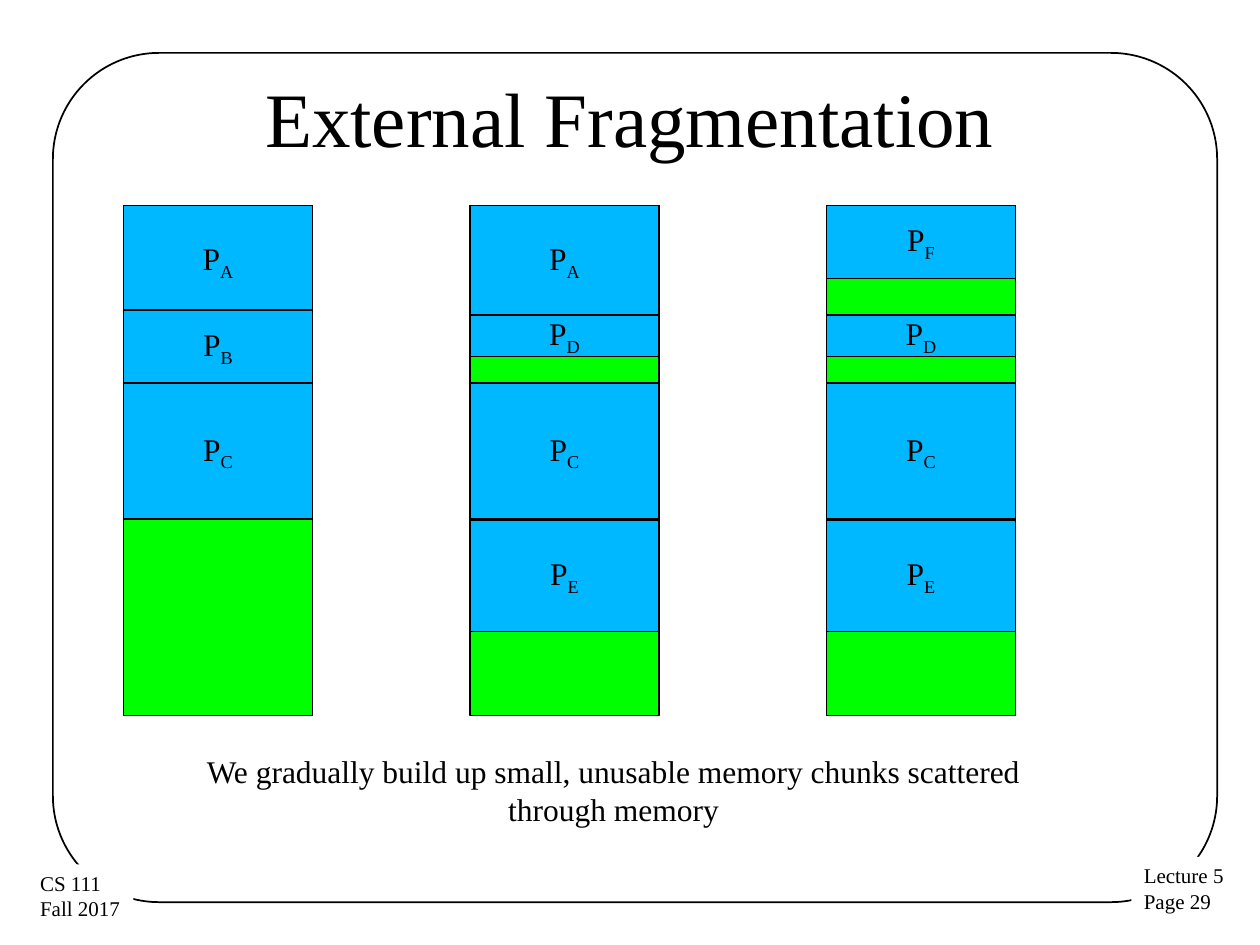
from dataclasses import dataclass

from pptx import Presentation
from pptx.dml.color import RGBColor as RGB
from pptx.enum.shapes import MSO_SHAPE as Shape
from pptx.enum.text import MSO_ANCHOR as Anchor, PP_ALIGN as Align
from pptx.util import Inches, Pt


@dataclass(frozen=True)
class Theme:
    face: str = "Times New Roman"
    ink: RGB = RGB(0, 0, 0)
    paper: RGB = RGB(255, 255, 255)
    used: RGB = RGB(0x00, 0xB8, 0xFF)
    free: RGB = RGB(0x00, 0xFF, 0x00)
    head: int = 44
    body: int = 18
    small: int = 12


class Deck:
    """Draws styled elements on the current slide."""

    def __init__(self, theme, slide):
        self.theme, self.slide = theme, slide

    def style(self, para, size, align=Align.CENTER):
        para.alignment = align
        font = para.font
        font.name, font.size = self.theme.face, Pt(size)
        font.color.rgb = self.theme.ink

    def title(self, text, *area):
        title = self.slide.shapes.title
        title.left, title.top, title.width, title.height = map(Inches, area)
        frame = title.text_frame
        frame.text, frame.vertical_anchor = text, Anchor.MIDDLE
        self.style(frame.paragraphs[0], self.theme.head)

    def shape(self, kind, area, fill=None, line=None):
        shape = self.slide.shapes.add_shape(kind, *map(Inches, area))
        shape.shadow.inherit = False
        if fill is None:
            shape.fill.background()
        else:
            shape.fill.solid()
            shape.fill.fore_color.rgb = fill
        if line is None:
            shape.line.fill.background()
        else:
            shape.line.color.rgb, shape.line.width = self.theme.ink, Pt(line)
        return shape

    def frame(self, *area):
        shape = self.shape(Shape.ROUNDED_RECTANGLE, area, line=1)
        shape.adjustments[0] = 0.125

    def block(self, *area, name=None):
        fill = self.theme.used if name else self.theme.free
        shape = self.shape(Shape.RECTANGLE, area, fill, 0.75)
        if name:
            frame = shape.text_frame
            frame.word_wrap, frame.vertical_anchor = False, Anchor.MIDDLE
            para = frame.paragraphs[0]
            self.style(para, self.theme.body)
            para.add_run().text = "P"
            sub = para.add_run()
            sub.text = name
            sub.font._element.set("baseline", "-25000")

    def label(self, lines, *area):
        shape = self.shape(Shape.RECTANGLE, area, self.theme.paper)
        frame = shape.text_frame
        frame.text, frame.word_wrap = "\n".join(lines), False
        frame.vertical_anchor = Anchor.TOP
        for para in frame.paragraphs:
            self.style(para, self.theme.small, Align.LEFT)

    def note(self, text, *area):
        frame = self.slide.shapes.add_textbox(*map(Inches, area)).text_frame
        frame.text, frame.word_wrap = text, True
        self.style(frame.paragraphs[0], self.theme.body)


def main():
    prs = Presentation()
    prs.slide_width, prs.slide_height = Inches(10), Inches(7.5)
    deck = Deck(Theme(), prs.slides.add_slide(prs.slide_layouts[5]))

    deck.frame(0.42, 0.42, 9.24, 6.74)
    deck.label(["Lecture 5", "Page 29"], 8.98, 6.8, 0.84, 0.51)
    deck.label(["CS 111", "Fall 2017"], 0.22, 6.86, 0.84, 0.51)
    deck.title("External Fragmentation", 0.5, 0.3, 9, 1.25)

    top, wide, tall = 1.63, 1.5, 4.05
    spans = {
        "A": (top, 0.88),
        "B": (2.46, 0.58),
        "C": (3.04, 1.08),
        "D": (2.5, 0.33),
        "E": (4.13, 0.88),
        "F": (top, 0.58),
    }
    for left, names in ((0.98, "ABC"), (3.73, "ACDE"), (6.56, "CDEF")):
        deck.block(left, top, wide, tall)
        for name in names:
            start, size = spans[name]
            deck.block(left, start, wide, size, name=name)

    deck.note("We gradually build up small, unusable memory chunks scattered "
              "through memory", 1.43, 5.92, 6.88, 0.91)
    prs.save("out.pptx")


if __name__ == "__main__":
    main()
